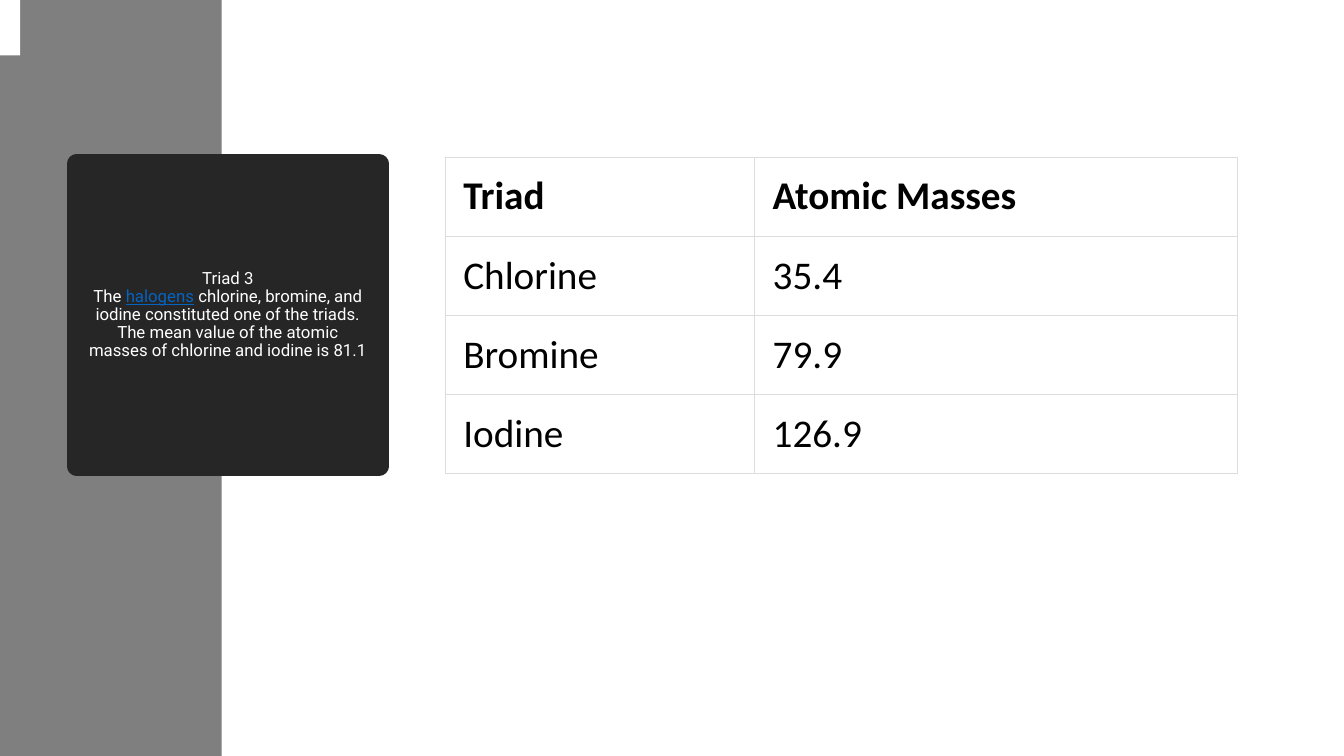
from pptx import Presentation
from pptx.dml.color import RGBColor
from pptx.enum.shapes import MSO_SHAPE
from pptx.enum.text import MSO_ANCHOR, PP_ALIGN
from pptx.oxml import parse_xml
from pptx.oxml.ns import nsdecls
from pptx.util import Pt

WHITE = RGBColor(0xFF, 0xFF, 0xFF)
BLACK = RGBColor(0x00, 0x00, 0x00)
GRAY = RGBColor(0x7F, 0x7F, 0x7F)
CHARCOAL = RGBColor(0x26, 0x26, 0x26)
LINK_BLUE = RGBColor(0x05, 0x63, 0xC1)
BORDER_GRAY = RGBColor(0xDD, 0xDD, 0xDD)

SLIDE_WIDTH, SLIDE_HEIGHT = 960, 540

CARD_TEXT = [
    [("Triad 3", {})],
    [
        ("The ", {}),
        ("halogens", {"color": LINK_BLUE, "underline": True}),
        (" chlorine, bromine, and iodine constituted one of the triads.", {}),
    ],
    [("The mean value of the atomic masses of chlorine and iodine is 81.1", {})],
]

MASSES = [
    ("Triad", "Atomic Masses"),
    ("Chlorine", "35.4"),
    ("Bromine", "79.9"),
    ("Iodine", "126.9"),
]


def add_text(paragraph, text, font="Calibri", size=28, color=BLACK,
             bold=False, underline=False):
    run = paragraph.add_run()
    run.text = text
    run.font.name = font
    run.font.size = Pt(size)
    run.font.color.rgb = color
    run.font.bold = bold
    run.font.underline = underline


def add_block(slide, left, top, width, height, color):
    block = slide.shapes.add_shape(
        MSO_SHAPE.RECTANGLE, Pt(left), Pt(top), Pt(width), Pt(height))
    block.shadow.inherit = False
    block.fill.solid()
    block.fill.fore_color.rgb = color
    block.line.fill.background()
    return block


def add_side_band(slide, left, top, width, height):
    add_block(slide, left, top, width, height, GRAY)
    # White notch in the top corner
    add_block(slide, left, top, 14.4, 39.6, WHITE)


def add_title_card(slide, left, top, width, height):
    card = add_block(slide, left, top, width, height, CHARCOAL)
    # The thick line with round joins gives the soft corners
    card.line.color.rgb = CHARCOAL
    card.line.width = Pt(13.75)
    card.line._get_or_add_ln().append(parse_xml(f"<a:round {nsdecls('a')}/>"))

    frame = card.text_frame
    frame.word_wrap = True
    frame.vertical_anchor = MSO_ANCHOR.MIDDLE
    frame.margin_left = frame.margin_right = Pt(8)
    for index, runs in enumerate(CARD_TEXT):
        paragraph = frame.add_paragraph() if index else frame.paragraphs[0]
        paragraph.alignment = PP_ALIGN.CENTER
        paragraph.line_spacing = 0.9
        for text, style in runs:
            add_text(paragraph, text,
                     **{"font": "Roboto", "size": 12, "color": WHITE, **style})


def add_borders(cell):
    properties = cell._tc.get_or_add_tcPr()
    for side in ("lnL", "lnR", "lnT", "lnB"):
        properties.append(parse_xml(
            f'<a:{side} {nsdecls("a")} w="{Pt(0.75)}"><a:solidFill>'
            f'<a:srgbClr val="{BORDER_GRAY}"/></a:solidFill></a:{side}>'))


def add_masses_table(slide, left, top, width, height):
    table = slide.shapes.add_table(
        len(MASSES), 2, Pt(left), Pt(top), Pt(width), Pt(height)).table
    triad_width = 221
    table.columns[0].width = Pt(triad_width)
    table.columns[1].width = Pt(width - triad_width)
    for row_index, values in enumerate(MASSES):
        table.rows[row_index].height = Pt(height / len(MASSES))
        for column_index, value in enumerate(values):
            cell = table.cell(row_index, column_index)
            add_borders(cell)
            cell.fill.solid()
            cell.fill.fore_color.rgb = WHITE
            cell.vertical_anchor = MSO_ANCHOR.MIDDLE
            cell.margin_left = cell.margin_right = Pt(13)
            cell.margin_top = cell.margin_bottom = Pt(9.4)
            add_text(cell.text_frame.paragraphs[0], value, bold=row_index == 0)


def main():
    presentation = Presentation()
    presentation.slide_width = Pt(SLIDE_WIDTH)
    presentation.slide_height = Pt(SLIDE_HEIGHT)
    slide = presentation.slides.add_slide(presentation.slide_layouts[6])

    add_side_band(slide, 0, 0, 158.4, SLIDE_HEIGHT)
    add_title_card(slide, 54.8, 117, 216, 216)
    add_masses_table(slide, 318, 112.2, 566, 226)

    presentation.save("out.pptx")


if __name__ == "__main__":
    main()
